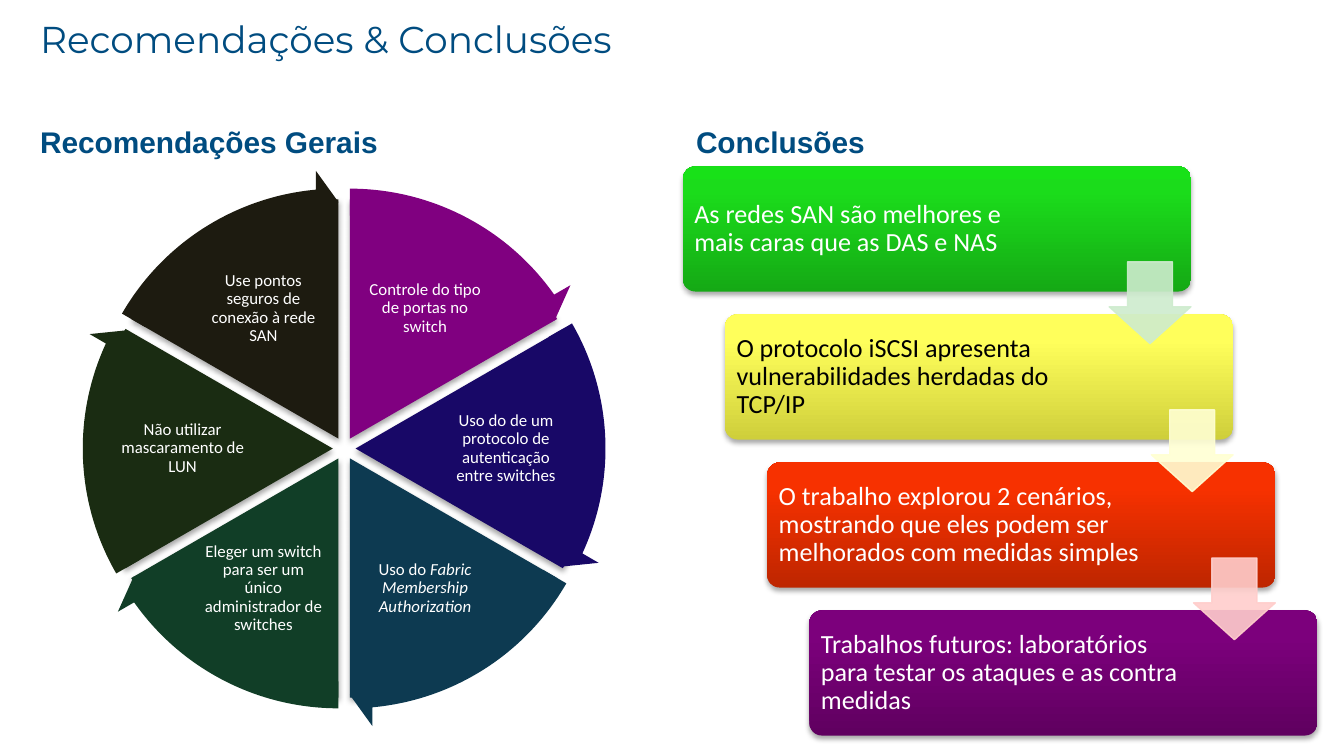
"""Build the slide of recommendations and conclusions."""
import copy
import math

import pptx
import pptx.dml.color
import pptx.enum.shapes
import pptx.enum.text
import pptx.oxml
import pptx.oxml.ns
import pptx.util

Pt = pptx.util.Pt
SHAPES = pptx.enum.shapes.MSO_SHAPE
ALIGN = pptx.enum.text.PP_ALIGN

HEADINGS = [
    ("Recomendações & Conclusões", (14.4, 7.9, 595, 25.2), "Montserrat", 20, False),
    ("Recomendações Gerais", (14.4, 66.2, 340.6, 19.4), "Arial", 16, True),
    ("Conclusões", (365.8, 66.2, 340.6, 19.4), "Arial", 16, True),
]
SLICES = [
    ("Controle do tipo de portas no switch", "", "800080"),
    ("Uso do de um protocolo de autenticação entre switches", "", "180867"),
    ("Uso do ", "Fabric Membership Authorization", "0D3A51"),
    ("Eleger um switch para ser um único administrador de switches", "", "113E27"),
    ("Não utilizar mascaramento de LUN", "", "1A2C12"),
    ("Use pontos seguros de conexão à rede SAN", "", "1D1B10"),
]
CARDS = [
    ("As redes SAN são melhores e mais caras que as DAS e NAS",
     194.4, "FFFFFF", ("15A915", "1BDC1B", "18E118")),
    ("O protocolo iSCSI apresenta vulnerabilidades herdadas do TCP/IP",
     202, "000000", ("CFCF3B", "FFFF5B", "FFFF5D")),
    ("O trabalho explorou 2 cenários, mostrando que eles podem ser melhorados com medidas simples",
     202, "FFFFFF", ("BE2600", "F73100", "F83200")),
    ("Trabalhos futuros: laboratórios para testar os ataques e as contra medidas",
     202, "FFFFFF", ("600060", "7C007C", "7D007D")),
]
ARROW_COLORS = ["CEECCE", "FFFFD3", "FFCECC"]

WHEEL_X, WHEEL_Y = 184.4, 240.3
SLICE_GAP, SLICE_RADIUS, ARROW_RADIUS, LABEL_RADIUS = 6.1, 128.2, 144, 86.6
CARD_LEFT, CARD_TOP, CARD_WIDTH, CARD_HEIGHT = 365.8, 89.2, 272.2, 67
CARD_STEP_X, CARD_STEP_Y = 22.6, 79.3
ARROW_SIZE = 43.8


def color(value):
    return pptx.dml.color.RGBColor.from_string(value)


def add_shape(shapes, kind, box, adjustments, fill=None):
    shape = shapes.add_shape(kind, *map(Pt, box))
    for index, value in enumerate(adjustments):
        shape.adjustments[index] = value
    shape.shadow.inherit = False
    shape.line.fill.background()
    if fill:
        shape.fill.solid()
        shape.fill.fore_color.rgb = color(fill)
    return shape


def add_shadow(shape):
    effects = shape.element.spPr.find(pptx.oxml.ns.qn("a:effectLst"))
    effects.append(pptx.oxml.parse_xml(
        f'<a:outerShdw {pptx.oxml.ns.nsdecls("a")} blurRad="{Pt(3.1)}" dist="{Pt(1.8)}"'
        ' dir="5400000" rotWithShape="0"><a:srgbClr val="000000">'
        '<a:alpha val="35000"/></a:srgbClr></a:outerShdw>'))


def add_gradient(shape, colors):
    shape.fill.gradient()
    shape.fill.gradient_angle = 90
    stop_list = next(shape.element.spPr.iter(pptx.oxml.ns.qn("a:gsLst")))
    stop_list.append(copy.deepcopy(stop_list[-1]))
    for stop, position, value in zip(shape.fill.gradient_stops, (0, 0.8, 1), colors):
        stop.position = position
        stop.color.rgb = color(value)


def add_text(shapes, text, box, *, font, size, fill, bold=False, italic_text="",
             align=ALIGN.LEFT, spacing=1, insets=(7.2, 3.6)):
    frame = shapes.add_textbox(*map(Pt, box)).text_frame
    frame.word_wrap = True
    frame.vertical_anchor = pptx.enum.text.MSO_ANCHOR.MIDDLE
    frame.margin_left = frame.margin_right = Pt(insets[0])
    frame.margin_top = frame.margin_bottom = Pt(insets[1])
    paragraph = frame.paragraphs[0]
    paragraph.alignment = align
    paragraph.line_spacing = spacing
    for content, italic in ((text, False), (italic_text, True)):
        if content:
            run = paragraph.add_run()
            run.text = content
            run.font.name = font
            run.font.size = Pt(size)
            run.font.bold = bold
            run.font.italic = italic
            run.font.color.rgb = color(fill)


def around(x, y, width, height):
    return x - width / 2, y - height / 2, width, height


def from_center(angle, radius):
    radians = math.radians(angle)
    return WHEEL_X + radius * math.cos(radians), WHEEL_Y + radius * math.sin(radians)


def add_wheel(slide):
    shapes = slide.shapes.add_group_shape().shapes
    for index, (text, italic_text, fill) in enumerate(SLICES):
        middle = 300 + 60 * index
        start, end = ((middle + turn) % 360 * 0.6 for turn in (-30, 30))
        box = around(*from_center(middle, SLICE_GAP), 2 * SLICE_RADIUS, 2 * SLICE_RADIUS)
        add_shadow(add_shape(shapes, SHAPES.PIE, box, (start, end), fill))
        label_size = (70, 50) if middle % 180 == 0 else (67, 52)
        add_text(shapes, text, around(*from_center(middle, LABEL_RADIUS), *label_size),
                 font="Calibri", size=9, fill="FFFFFF", italic_text=italic_text,
                 align=ALIGN.CENTER, spacing=0.9, insets=(0.9, 0.9))
    for index, (_, _, fill) in enumerate(SLICES):
        middle = 300 + 60 * index
        start, end = ((middle + turn) % 360 * 0.6 for turn in (-30, 30))
        box = around(*from_center(middle, SLICE_GAP), 2 * ARROW_RADIUS, 2 * ARROW_RADIUS)
        add_shape(shapes, SHAPES.CIRCULAR_ARROW, box,
                  (0.05, 3.28, end - 3.28, start, 0.06), fill)


def add_cards(slide):
    shapes = slide.shapes.add_group_shape().shapes
    for index, (text, text_width, fill, gradient) in enumerate(CARDS):
        left, top = CARD_LEFT + CARD_STEP_X * index, CARD_TOP + CARD_STEP_Y * index
        card = add_shape(shapes, SHAPES.ROUNDED_RECTANGLE,
                         (left, top, CARD_WIDTH, CARD_HEIGHT), (0.1,))
        add_gradient(card, gradient)
        add_shadow(card)
        add_text(shapes, text, (left + 2, top + 2, text_width, CARD_HEIGHT - 4),
                 font="Calibri", size=14, fill=fill, spacing=0.9, insets=(4.2, 4.2))
    for index, fill in enumerate(ARROW_COLORS):
        left = CARD_LEFT + CARD_STEP_X * index + 228.4
        top = CARD_TOP + CARD_STEP_Y * index + 51.1
        arrow = add_shape(shapes, SHAPES.DOWN_ARROW,
                          (left, top, ARROW_SIZE, ARROW_SIZE), (0.55, 0.45), fill)
        arrow.line.color.rgb = color(fill)
        arrow.line.width = Pt(0.75)
        for element in arrow.element.spPr.iter(pptx.oxml.ns.qn("a:srgbClr")):
            element.append(pptx.oxml.parse_xml(
                f'<a:alpha {pptx.oxml.ns.nsdecls("a")} val="90000"/>'))


def main():
    presentation = pptx.Presentation()
    presentation.slide_width, presentation.slide_height = Pt(720), Pt(405)
    slide = presentation.slides.add_slide(presentation.slide_layouts[6])
    add_wheel(slide)
    add_cards(slide)
    for text, box, font, size, bold in HEADINGS:
        add_text(slide.shapes, text, box, font=font, size=size, fill="004C80", bold=bold)
    presentation.save("out.pptx")


if __name__ == "__main__":
    main()
